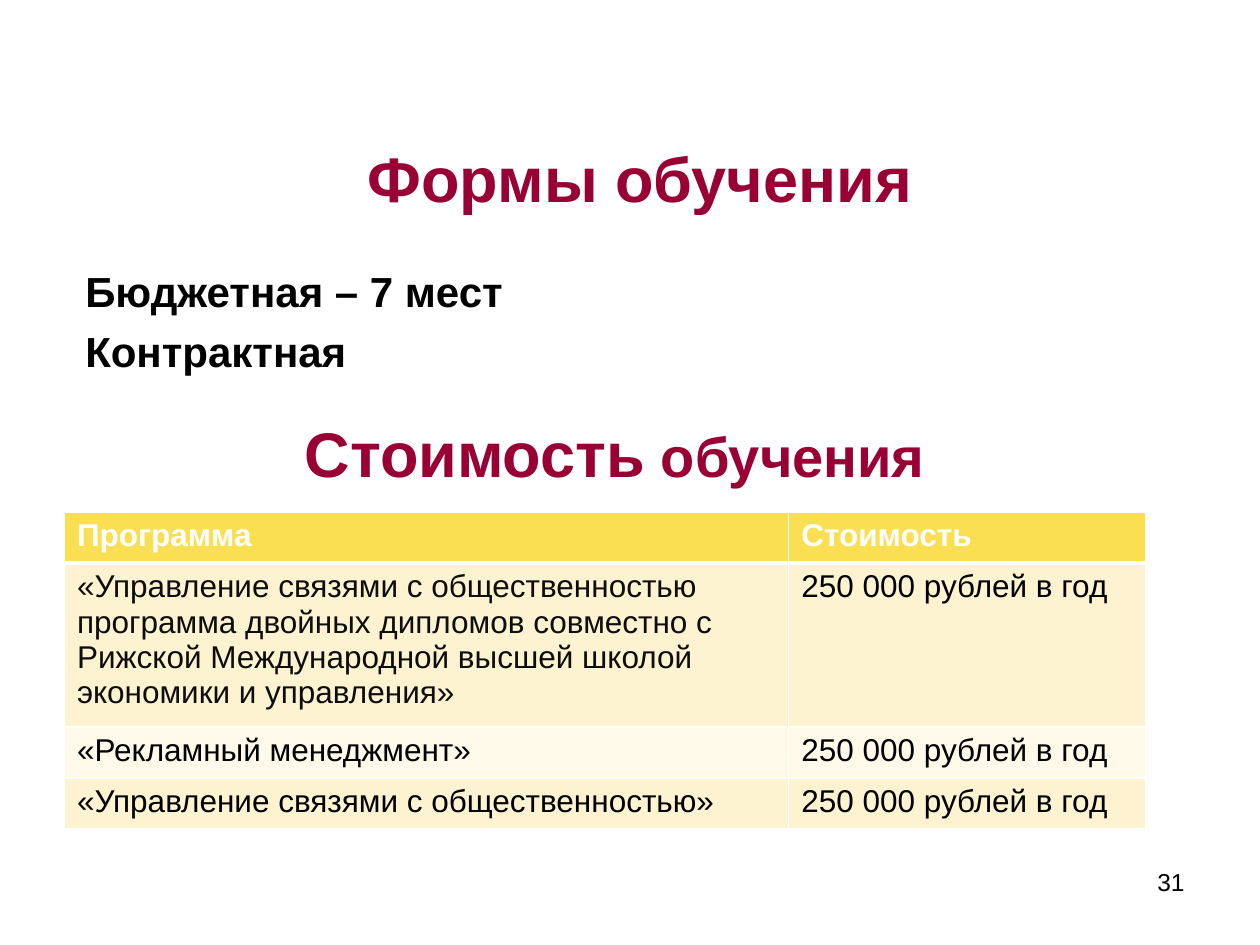
import pptx
import pptx.util
import pptx.dml.color
import pptx.enum.text
from lxml import etree
from pptx.oxml.ns import qn

Cm, Pt = pptx.util.Cm, pptx.util.Pt
RGB = pptx.dml.color.RGBColor.from_string
ALIGN = pptx.enum.text.PP_ALIGN
ANCHOR = pptx.enum.text.MSO_ANCHOR

# Content
TITLE = "Формы обучения"
FORMS = ["Бюджетная – 7 мест", "Контрактная"]
COST_TITLE = [("Стоимость", "title"), (" обучения", "subtitle")]
PRICE = "250 000 рублей в год"
ROWS = [
    ("Программа", "Стоимость"),
    ("«Управление связями с общественностью программа двойных дипломов "
     "совместно с Рижской Международной высшей школой экономики и управления»", PRICE),
    ("«Рекламный менеджмент»", PRICE),
    ("«Управление связями с общественностью»", PRICE),
]
PAGE = "31"

# Theme and layout
THEME = {
    "font": "Arial",
    "size": {"title": 36, "subtitle": 32, "body": 24, "table": 18, "page": 14},
    "accent": "990033", "text": "000000", "soft": "0D0D0D", "white": "FFFFFF",
    "header": "FBDF53", "bands": ["FDF3D1", "FEF9E9"],
}
COL_WIDTHS = [14.6, 7.19]
ROW_HEIGHTS = [1.03, 3.07, 1.03, 1.03]


def style(font, size, color, bold=False):
    font.name, font.size, font.bold = THEME["font"], Pt(THEME["size"][size]), bold
    font.color.rgb = RGB(THEME[color])


def add_box(s, left, top, width, height):
    tf = s.shapes.add_textbox(Cm(left), Cm(top), Cm(width), Cm(height)).text_frame
    tf.word_wrap = True
    return tf


def set_borders(cell, widths):
    tc_pr = cell._tc.get_or_add_tcPr()
    for i, (side, width) in enumerate(widths.items()):
        ln = etree.Element(qn(f"a:ln{side}"), w=str(Pt(width)))
        fill = etree.SubElement(ln, qn("a:solidFill"))
        etree.SubElement(fill, qn("a:srgbClr"), val=THEME["white"])
        tc_pr.insert(i, ln)


prs = pptx.Presentation()
prs.slide_width, prs.slide_height = Cm(25.4), Cm(19.05)
s = prs.slides.add_slide(prs.slide_layouts[5])

# Title
title = s.shapes.title
title.left, title.top, title.width, title.height = Cm(1.47), Cm(1.98), Cm(22.86), Cm(3.18)
tf = title.text_frame
tf.text, tf.vertical_anchor = TITLE, ANCHOR.MIDDLE
tf.paragraphs[0].alignment = ALIGN.CENTER
style(tf.paragraphs[0].font, "title", "accent", True)

# Forms of study
tf = add_box(s, 1.47, 5.92, 11.23, 1.78)
tf.vertical_anchor = ANCHOR.BOTTOM
for i, text in enumerate(FORMS):
    p = tf.add_paragraph() if i else tf.paragraphs[0]
    p.text = text
    if i:
        p.space_before = Pt(5.5)
    style(p.font, "body", "text", True)

# Cost heading
p = add_box(s, 5.89, 8.23, 14.81, 1.6).paragraphs[0]
for text, size in COST_TITLE:
    r = p.add_run()
    r.text = text
    style(r.font, size, "accent", True)

# Page number
p = add_box(s, 18.21, 17.35, 5.92, 1.32).paragraphs[0]
p.text, p.alignment = PAGE, ALIGN.RIGHT
style(p.font, "page", "text")

# Price table
table = s.shapes.add_table(len(ROWS), len(COL_WIDTHS), Cm(1.3), Cm(10.32),
                           Cm(sum(COL_WIDTHS)), Cm(sum(ROW_HEIGHTS))).table
for column, width in zip(table.columns, COL_WIDTHS):
    column.width = Cm(width)
for i, (row, height) in enumerate(zip(table.rows, ROW_HEIGHTS)):
    row.height = Cm(height)
    for j, cell in enumerate(row.cells):
        cell.text = ROWS[i][j]
        color = "white" if i == 0 else "soft" if (i, j) == (1, 0) else "text"
        style(cell.text_frame.paragraphs[0].font, "table", color, i == 0)
        cell.fill.solid()
        cell.fill.fore_color.rgb = RGB(THEME["bands"][(i - 1) % 2] if i else THEME["header"])
        set_borders(cell, {"L": 1, "R": 1, "T": 3 if i == 1 else 1, "B": 1 if i else 3})

prs.save("out.pptx")
